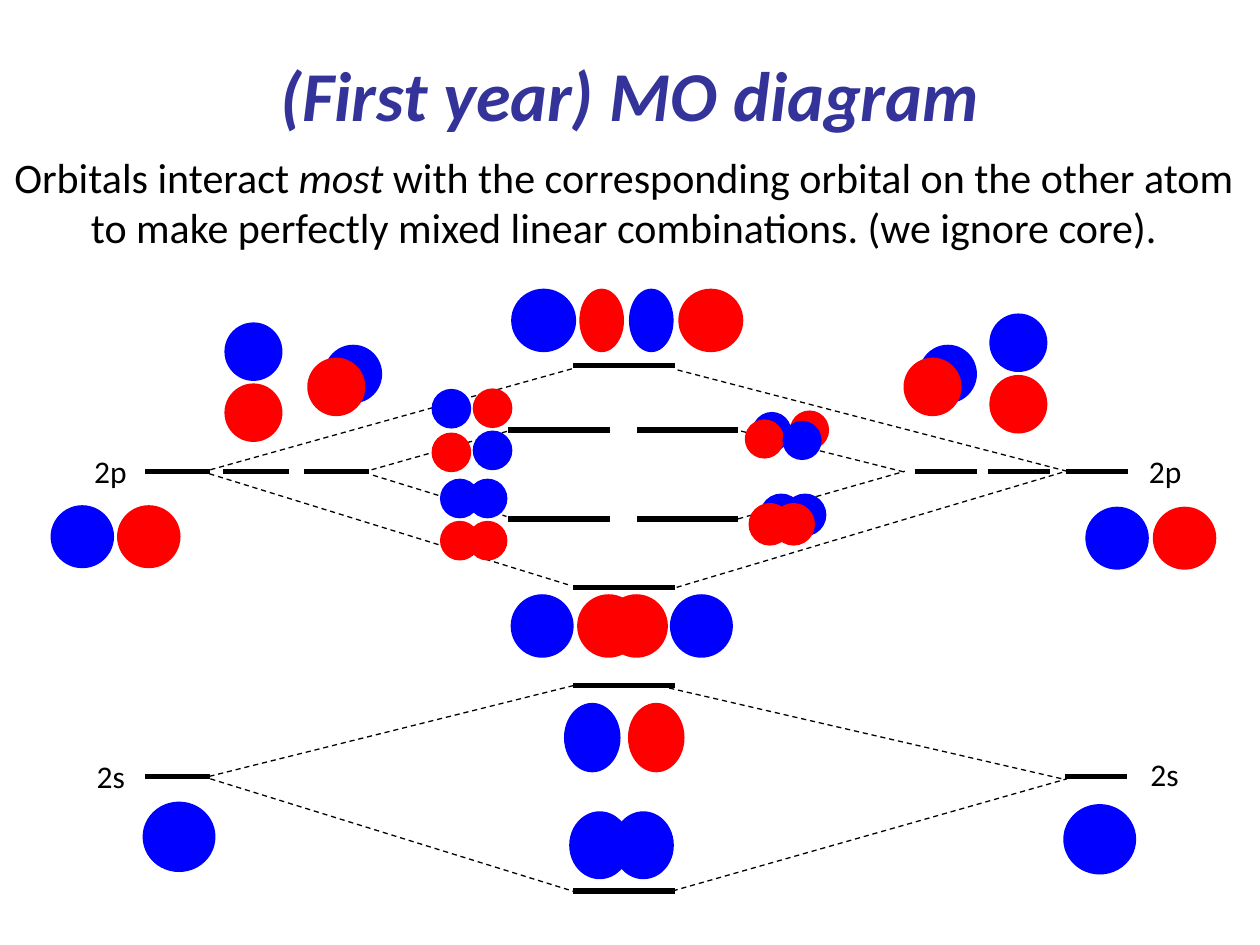
import dataclasses
import typing

import pptx
import pptx.dml.color
import pptx.enum.dml
import pptx.enum.shapes
import pptx.enum.text
import pptx.oxml.ns
import pptx.util

Cm = pptx.util.Cm
Pt = pptx.util.Pt
Color = pptx.dml.color.RGBColor
Point = tuple[float, float]


@dataclasses.dataclass(frozen=True)
class Theme:
    font: str = "Calibri"
    title_color: Color = Color(0x33, 0x33, 0x99)
    ink: Color = Color(0, 0, 0)
    positive: Color = Color(0, 0, 0xFF)
    negative: Color = Color(0xFF, 0, 0)
    title_size: int = 40
    body_size: int = 24
    label_size: int = 18
    level_weight: float = 3
    link_weight: float = 0.75


@dataclasses.dataclass(frozen=True)
class Level:
    left: float
    y: float
    width: float


@dataclasses.dataclass(frozen=True)
class Link:
    start: Point
    end: Point


@dataclasses.dataclass(frozen=True)
class Label:
    text: str
    left: float
    top: float


@dataclasses.dataclass(frozen=True)
class Orbital:
    signs: str
    centers: tuple[Point, ...]
    width: float
    height: float


THEME = Theme()
LEFT_ATOM, RIGHT_ATOM, MOLECULE = 1.32, 1.26, 2.04
S_Y, P_Y = 15.65, 9.5

LEVELS = [
    Level(2.92, S_Y, LEFT_ATOM),
    Level(21.46, S_Y, RIGHT_ATOM),
    *(Level(left, P_Y, LEFT_ATOM) for left in (2.92, 4.5, 6.12)),
    *(Level(left, P_Y, RIGHT_ATOM) for left in (18.44, 19.91, 21.48)),
    *(Level(11.56, y, MOLECULE) for y in (7.37, 11.84, 13.82, 17.96)),
    *(Level(left, y, MOLECULE) for y in (8.67, 10.46) for left in (10.25, 12.84)),
]

LINKS = [
    Link((4.24, 15.7), (11.6, 17.98)),
    Link((4.22, 15.65), (11.56, 13.82)),
    Link((13.49, 13.87), (21.41, 15.7)),
    Link((13.56, 17.96), (21.51, 15.7)),
    Link((4.24, 9.47), (11.58, 7.42)),
    Link((4.22, 9.55), (11.46, 11.79)),
    Link((21.51, 9.5), (13.59, 7.44)),
    Link((13.64, 11.84), (21.49, 9.5)),
    Link((7.52, 9.58), (10.21, 10.41)),
    Link((14.94, 8.69), (18.29, 9.53)),
    Link((14.88, 10.46), (18.24, 9.5)),
    Link((7.49, 9.47), (10.24, 8.69)),
]

LABELS = [
    Label("2s", 1.7, 15.14),
    Label("2s", 22.94, 15.09),
    Label("2p", 22.91, 8.99),
    Label("2p", 1.65, 8.99),
]

ORBITALS = [
    Orbital("++", ((12.09, 17.04), (12.97, 17.04)), 1.23, 1.37),
    Orbital("+-", ((11.94, 14.87), (13.23, 14.87)), 1.14, 1.4),
    Orbital("+", ((3.61, 16.87),), 1.47, 1.42),
    Orbital("+", ((22.17, 16.92),), 1.47, 1.42),
    Orbital("+-", ((22.52, 10.85), (23.88, 10.85)), 1.28, 1.27),
    Orbital("+-", ((1.66, 10.82), (3, 10.82)), 1.28, 1.27),
    Orbital("+-", ((20.53, 6.91), (20.53, 8.15)), 1.17, 1.18),
    Orbital("+-", ((5.11, 7.09), (5.11, 8.32)), 1.17, 1.18),
    Orbital("+-", ((19.11, 7.54), (18.8, 7.8)), 1.17, 1.18),
    Orbital("+-", ((7.12, 7.54), (6.78, 7.8)), 1.17, 1.18),
    Orbital("+-+-", ((10.93, 12.62), (12.27, 12.62), (14.14, 12.62), (12.83, 12.62)), 1.27, 1.28),
    Orbital("+-", ((10.96, 6.46), (14.33, 6.46)), 1.31, 1.28),
    Orbital("-+", ((12.13, 6.46), (13.13, 6.46)), 0.9, 1.28),
    Orbital("+-+-", ((9.83, 10.05), (9.83, 10.9), (9.27, 10.05), (9.27, 10.9)), 0.8, 0.8),
    Orbital("+-+-", ((15.75, 10.38), (15.52, 10.57), (16.23, 10.38), (16, 10.57)), 0.86, 0.86),
    Orbital("+-+-", ((9.93, 9.08), (9.93, 8.23), (9.1, 8.24), (9.1, 9.12)), 0.8, 0.8),
    Orbital("+--+", ((15.56, 8.7), (15.41, 8.85), (16.32, 8.67), (16.17, 8.88)), 0.79, 0.79),
]


def format_run(run: typing.Any, size: int, color: Color, bold: bool = False, italic: bool = False) -> None:
    run.font.name = THEME.font
    run.font.size = Pt(size)
    run.font.color.rgb = color
    run.font.bold = bold
    run.font.italic = italic


def place(shape: typing.Any, left: float, top: float, width: float, height: float) -> None:
    shape.left, shape.top = Cm(left), Cm(top)
    shape.width, shape.height = Cm(width), Cm(height)


def write_title(slide: typing.Any) -> None:
    title = slide.shapes.title
    place(title, 1.27, 0.3, 22.86, 3.18)
    title.text_frame.text = "(First year) MO diagram"
    title.text_frame.vertical_anchor = pptx.enum.text.MSO_ANCHOR.MIDDLE
    paragraph = title.text_frame.paragraphs[0]
    paragraph.alignment = pptx.enum.text.PP_ALIGN.CENTER
    format_run(paragraph.runs[0], THEME.title_size, THEME.title_color, bold=True, italic=True)


def write_body(slide: typing.Any) -> None:
    body = slide.placeholders[1]
    place(body, 0.03, 2.92, 25.35, 2.72)
    body.text_frame.auto_size = pptx.enum.text.MSO_AUTO_SIZE.NONE
    body.text_frame.margin_left = Cm(0)
    paragraph = body.text_frame.paragraphs[0]
    paragraph.alignment = pptx.enum.text.PP_ALIGN.CENTER
    properties = paragraph._p.get_or_add_pPr()
    properties.set("marL", "0")
    properties.set("indent", "0")
    properties.append(properties.makeelement(pptx.oxml.ns.qn("a:buNone"), {}))
    for text, italic in (
        ("Orbitals interact ", False),
        ("most", True),
        (" with the corresponding orbital on the other atom to make perfectly mixed "
         "linear combinations. (we ignore core).", False),
    ):
        run = paragraph.add_run()
        run.text = text
        format_run(run, THEME.body_size, THEME.ink, italic=italic)


def draw_line(slide: typing.Any, start: Point, end: Point, weight: float) -> typing.Any:
    connector = slide.shapes.add_connector(
        pptx.enum.shapes.MSO_CONNECTOR.STRAIGHT, *(Cm(value) for value in (*start, *end))
    )
    connector.line.color.rgb = THEME.ink
    connector.line.width = Pt(weight)
    properties = connector._element.spPr
    properties.append(properties.makeelement(pptx.oxml.ns.qn("a:effectLst"), {}))
    return connector


def draw_level(slide: typing.Any, level: Level) -> None:
    draw_line(slide, (level.left, level.y), (level.left + level.width, level.y), THEME.level_weight)


def draw_link(slide: typing.Any, link: Link) -> None:
    connector = draw_line(slide, link.start, link.end, THEME.link_weight)
    connector.line.dash_style = pptx.enum.dml.MSO_LINE.DASH


def draw_label(slide: typing.Any, label: Label) -> None:
    box = slide.shapes.add_textbox(Cm(label.left), Cm(label.top), Cm(1.3), Cm(1.02))
    box.text_frame.text = label.text
    box.text_frame.word_wrap = True
    format_run(box.text_frame.paragraphs[0].runs[0], THEME.label_size, THEME.ink)


def draw_orbital(slide: typing.Any, orbital: Orbital) -> None:
    for sign, (x, y) in zip(orbital.signs, orbital.centers):
        lobe = slide.shapes.add_shape(
            pptx.enum.shapes.MSO_SHAPE.OVAL,
            Cm(x - orbital.width / 2), Cm(y - orbital.height / 2),
            Cm(orbital.width), Cm(orbital.height),
        )
        lobe.shadow.inherit = False
        lobe.fill.solid()
        lobe.fill.fore_color.rgb = THEME.positive if sign == "+" else THEME.negative
        lobe.line.fill.background()


def main() -> None:
    presentation = pptx.Presentation()
    presentation.slide_width, presentation.slide_height = Cm(25.4), Cm(19.05)
    slide = presentation.slides.add_slide(presentation.slide_layouts[1])
    write_title(slide)
    write_body(slide)
    for draw, items in (
        (draw_level, LEVELS), (draw_link, LINKS), (draw_label, LABELS), (draw_orbital, ORBITALS)
    ):
        for item in items:
            draw(slide, item)
    presentation.save("out.pptx")


if __name__ == "__main__":
    main()
